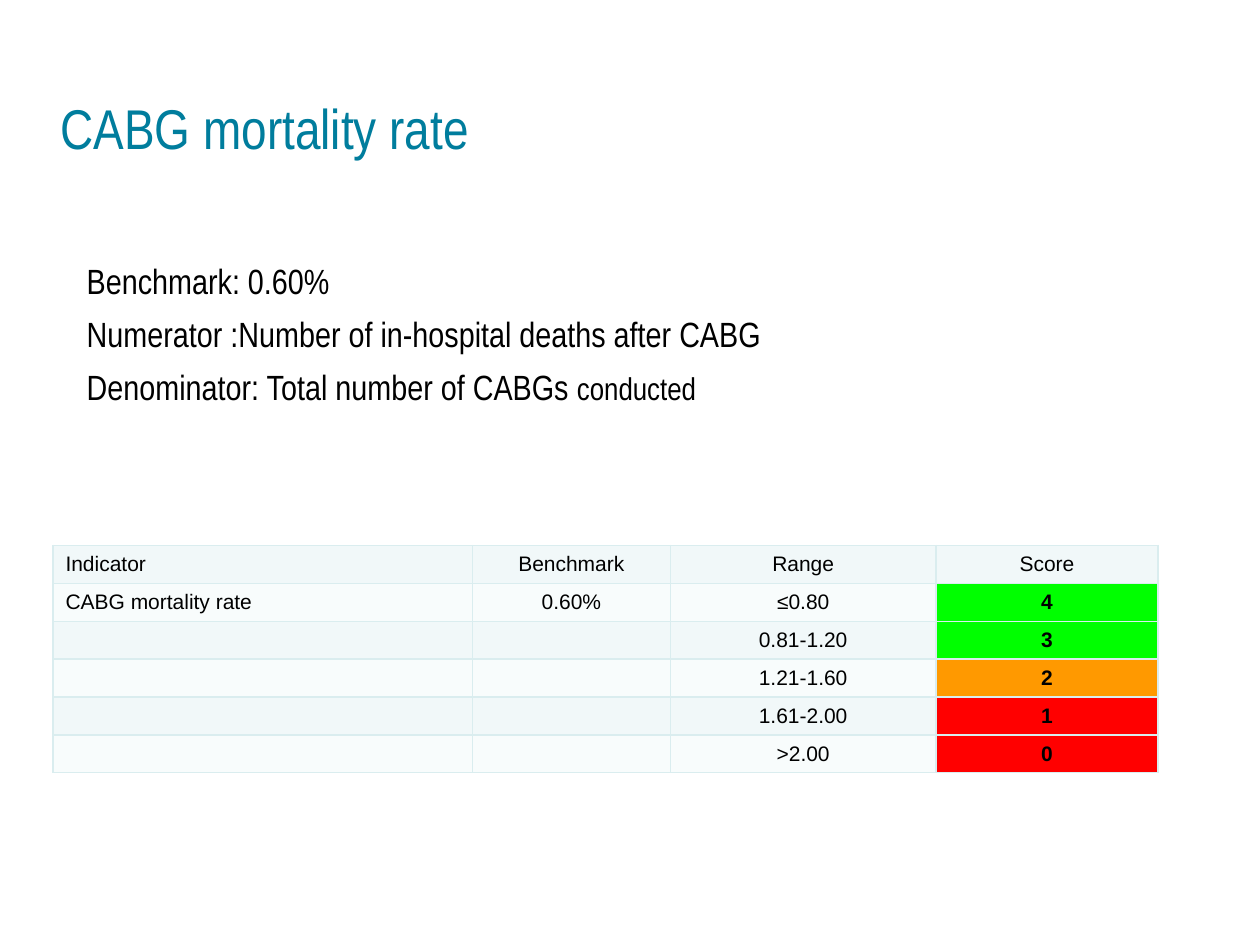
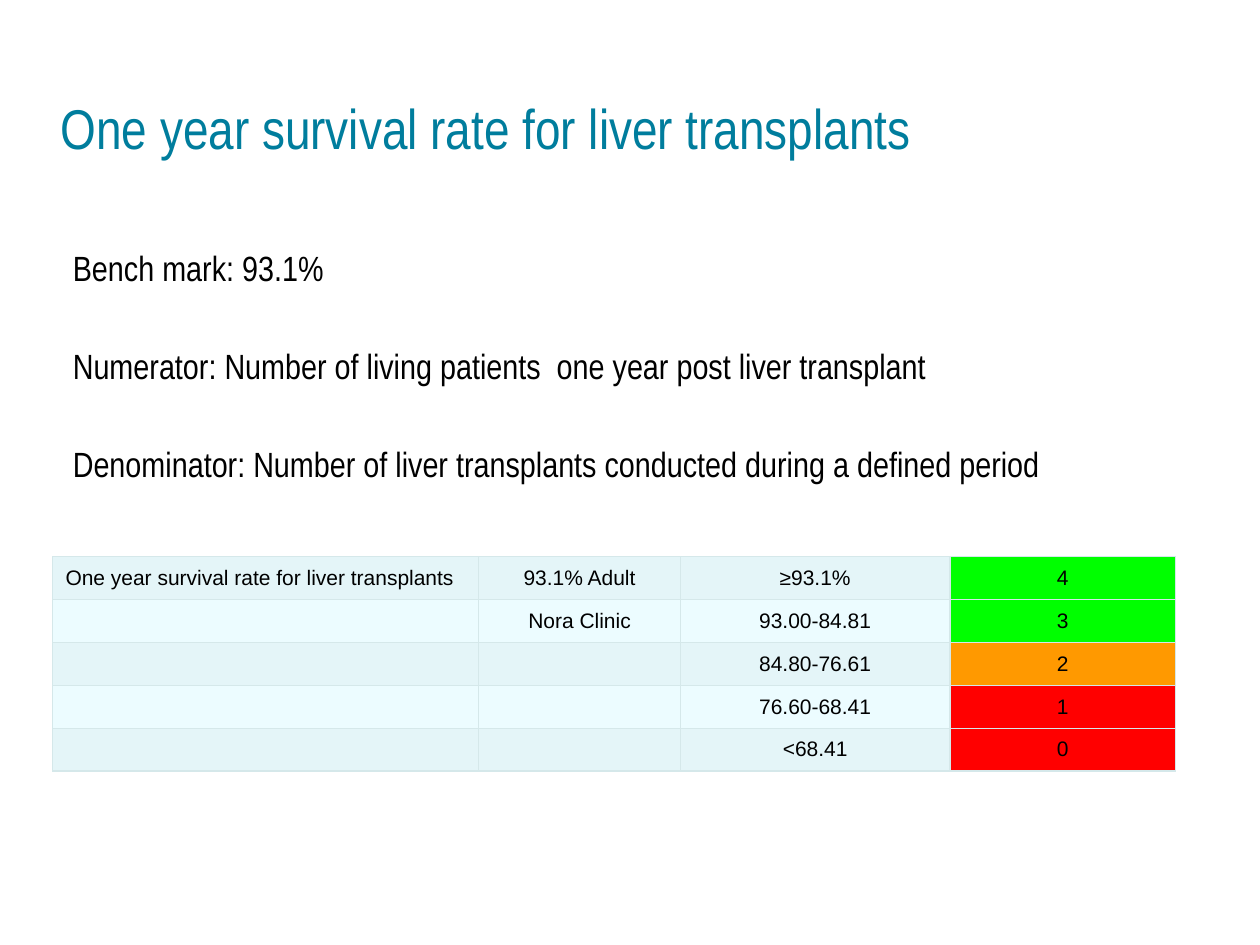
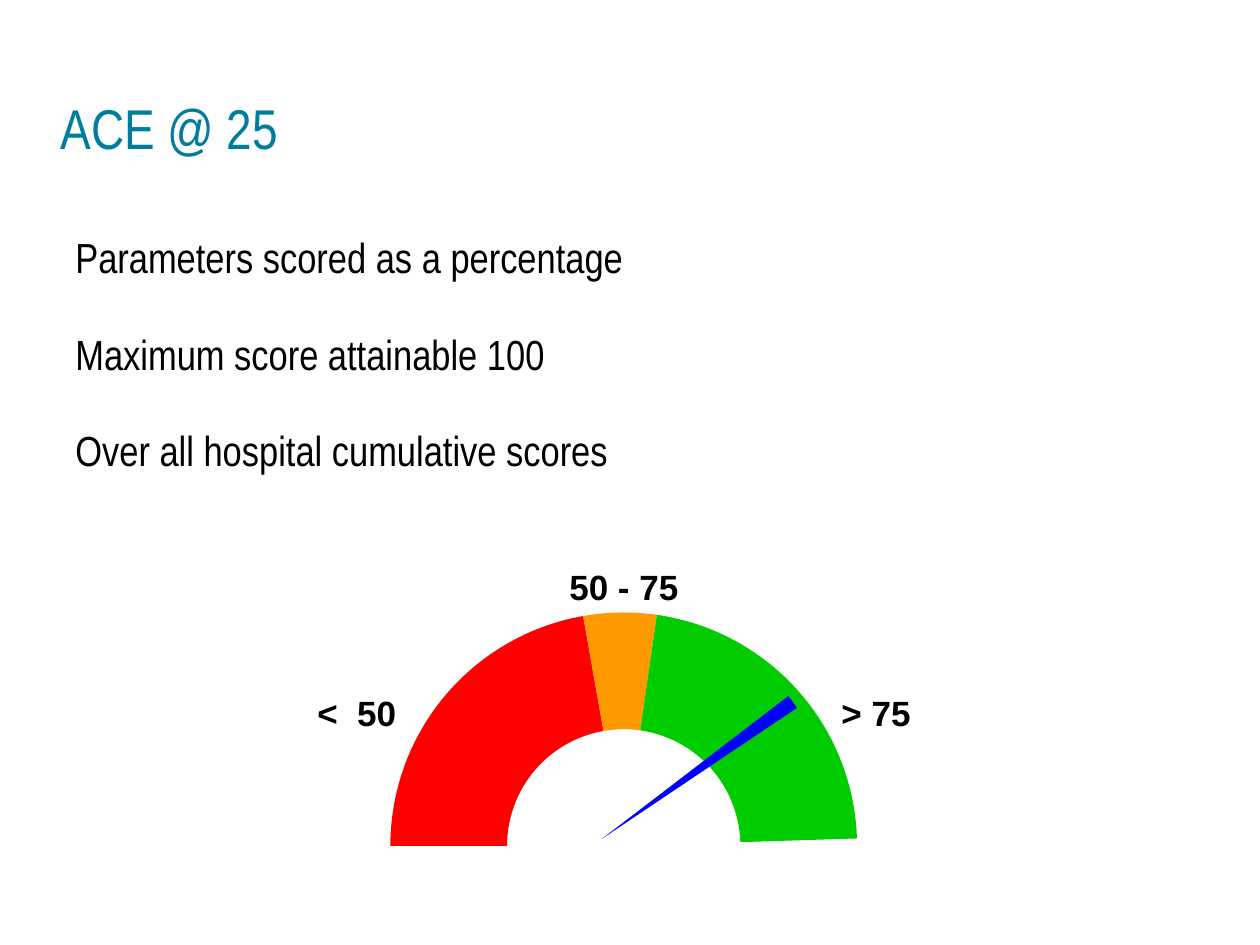
import pptx
import pptx.util
import pptx.chart.data
import pptx.dml.color
import pptx.enum.chart
import pptx.enum.text
import pptx.oxml
import pptx.oxml.ns

Inches = pptx.util.Inches
Pt = pptx.util.Pt
RGBColor = pptx.dml.color.RGBColor
Align = pptx.enum.text.PP_ALIGN
Anchor = pptx.enum.text.MSO_ANCHOR
Kind = pptx.enum.chart.XL_CHART_TYPE
qn = pptx.oxml.ns.qn

TEAL = RGBColor(0x00, 0x7D, 0x9D)
BLACK = RGBColor(0, 0, 0)
BLUE = RGBColor(0, 0, 0xFF)
LIME = RGBColor(0, 0xFF, 0)
GREEN = RGBColor(0, 0xCC, 0)
AMBER = RGBColor(0xFF, 0x99, 0)
RED = RGBColor(0xFF, 0, 0)
ICE = RGBColor(0xBB, 0xE0, 0xE3)
PALE = (RGBColor(0xF1, 0xF8, 0xF9), RGBColor(0xF8, 0xFC, 0xFC))
AQUA = (RGBColor(0xE4, 0xF5, 0xF8), RGBColor(0xEC, 0xFC, 0xFF))
EDGE = RGBColor(0xDA, 0xED, 0xEF)
RIM = RGBColor(0xD5, 0xE8, 0xEA)
SCORES = {"4": LIME, "3": LIME, "2": AMBER, "1": RED, "0": RED}
NARROW = "Arial Narrow"
PLAIN = "Arial"
C_NS = 'xmlns:c="http://schemas.openxmlformats.org/drawingml/2006/chart"'
A_NS = 'xmlns:a="http://schemas.openxmlformats.org/drawingml/2006/main"'


class Deck:
    def __init__(self):
        self.file = pptx.Presentation()
        self.file.slide_width = Inches(10)
        self.file.slide_height = Inches(7.5)
        self.slide = None

    def style(self, para, size, face=NARROW, color=BLACK, bold=False):
        for run in para.runs:
            font = run.font
            font.name, font.size, font.bold = face, Pt(size), bold
            font.color.rgb = color

    def title(self, text, width=8.29):
        self.slide = self.file.slides.add_slide(self.file.slide_layouts[5])
        shape = self.slide.shapes.title
        shape.left, shape.top = Inches(0.38), Inches(0.59)
        shape.width, shape.height = Inches(width), Inches(0.74)
        frame = shape.text_frame
        frame.text = text
        frame.auto_size = pptx.enum.text.MSO_AUTO_SIZE.NONE
        frame.vertical_anchor = Anchor.BOTTOM
        para = frame.paragraphs[0]
        para.alignment = Align.LEFT
        para.line_spacing = 0.9
        self.style(para, 32, color=TEAL)

    def body(self, box, lines, size, gap, pitch=1.0):
        frame = self.slide.shapes.add_textbox(*map(Inches, box)).text_frame
        frame.word_wrap = True
        frame.text = "\n".join(lines)
        for i, para in enumerate(frame.paragraphs):
            para.line_spacing = pitch
            para.space_before = Pt(gap if i else 0)
            self.style(para, size)
        return frame

    def label(self, text, left, top, width):
        box = self.slide.shapes.add_textbox(
            Inches(left), Inches(top), Inches(width), Inches(0.44))
        box.text_frame.word_wrap = False
        box.text_frame.text = text
        self.style(box.text_frame.paragraphs[0], 20, PLAIN, bold=True)

    def edges(self, cell, color, width):
        props = cell._tc.get_or_add_tcPr()
        for side in "LRTB":
            props.append(pptx.oxml.parse_xml(
                f'<a:ln{side} {A_NS} w="{Pt(width)}"><a:solidFill>'
                f'<a:srgbClr val="{color}"/></a:solidFill></a:ln{side}>'))

    def table(self, left, top, cols, rows, data, bands, edge, width, bold):
        table = self.slide.shapes.add_table(
            len(rows), len(cols), Inches(left), Inches(top),
            Inches(sum(cols)), Inches(sum(rows))).table
        for col, size in zip(table.columns, cols):
            col.width = Inches(size)
        for row, size in zip(table.rows, rows):
            row.height = Inches(size)
        for r, texts in enumerate(data):
            for c, text in enumerate(texts):
                cell = table.cell(r, c)
                score = c == len(cols) - 1 and text in SCORES
                cell.text = text
                cell.vertical_anchor = Anchor.MIDDLE
                self.edges(cell, edge, width)
                cell.fill.solid()
                cell.fill.fore_color.rgb = SCORES[text] if score else bands[r % 2]
                para = cell.text_frame.paragraphs[0]
                para.alignment = Align.CENTER if c else Align.LEFT
                self.style(para, 12, PLAIN, bold=bool(score and bold))
                if not text:
                    para._p.get_or_add_endParaRPr().set("sz", "1200")

    def dial(self, kind, box, values, fills, plot):
        data = pptx.chart.data.CategoryChartData()
        data.categories = [str(i + 1) for i in range(len(values))]
        data.add_series("Series 1", values)
        chart = self.slide.shapes.add_chart(kind, *map(Inches, box), data).chart
        chart.has_legend = chart.has_title = False
        chart.font.name, chart.font.size = PLAIN, Pt(5.5)
        chart.font.color.rgb = BLACK
        ring = chart.plots[0]
        ring.vary_by_categories = True
        for i, color in enumerate(fills):
            form = ring.series[0].points[i].format
            form.line.fill.background()
            if color is None:
                form.fill.background()
            else:
                form.fill.solid()
                form.fill.fore_color.rgb = color
        self.turn(ring._element, plot)

    def turn(self, ring, plot):
        angle = ring.find(qn("c:firstSliceAng"))
        if angle is None:
            angle = pptx.oxml.parse_xml(f"<c:firstSliceAng {C_NS}/>")
            ring.append(angle)
        angle.set("val", "270")
        hole = ring.find(qn("c:holeSize"))
        if hole is not None:
            hole.set("val", "65")
        area = ring.getparent()
        for old in area.findall(qn("c:layout")):
            area.remove(old)
        parts = "".join(f'<c:{k} val="{v}"/>' for k, v in zip("xywh", plot))
        area.insert(0, pptx.oxml.parse_xml(
            f'<c:layout {C_NS}><c:manualLayout><c:layoutTarget val="inner"/>'
            '<c:xMode val="edge"/><c:yMode val="edge"/>'
            f"{parts}</c:manualLayout></c:layout>"))
        clear = (f"<c:spPr {C_NS} {A_NS}><a:noFill/>"
                 "<a:ln><a:noFill/></a:ln></c:spPr>")
        area.append(pptx.oxml.parse_xml(clear))
        area.getparent().addnext(pptx.oxml.parse_xml(clear))


def bypass(deck):
    deck.title("CABG mortality rate", 5.24)
    frame = deck.body((0.59, 2.06, 9.17, 2.08), [
        "Benchmark: 0.60%",
        "Numerator :Number of in-hospital deaths after CABG",
        "Denominator: Total number of CABGs "], 20, 10, 0.85)
    last = frame.paragraphs[-1]
    last.add_run().text = "conducted"
    deck.style(last, 20)
    last.runs[-1].font.size = Pt(18)
    deck.table(0.42, 4.33, [3.33, 1.57, 2.11, 1.76], [0.25] + [0.3] * 5, [
        ["Indicator", "Benchmark", "Range", "Score"],
        ["CABG mortality rate", "0.60%", "≤0.80", "4"],
        ["", "", "0.81-1.20", "3"],
        ["", "", "1.21-1.60", "2"],
        ["", "", "1.61-2.00", "1"],
        ["", "", ">2.00", "0"]], PALE, EDGE, 1, True)


def liver(deck):
    deck.title("One year survival rate for liver transplants")
    deck.body((0.48, 1.91, 9.4, 2.17), [
        "Bench mark: 93.1%",
        "Numerator: Number of living patients  one year post liver transplant",
        "Denominator: Number of liver transplants conducted during a defined period"],
        20, 32)
    deck.table(0.42, 4.42, [3.38, 1.6, 2.14, 1.79], [0.34] * 5, [
        ["One year survival rate for liver transplants", "93.1% Adult", "≥93.1%", "4"],
        ["", "Nora Clinic", "93.00-84.81", "3"],
        ["", "", "84.80-76.61", "2"],
        ["", "", "76.60-68.41", "1"],
        ["", "", "<68.41", "0"]], AQUA, RIM, 0.75, False)


def gauge(deck):
    deck.title("ACE @ 25")
    deck.body((0.5, 1.59, 6.33, 2.58), [
        "Parameters scored as a percentage",
        "Maximum score attainable 100",
        "Over all hospital cumulative scores"], 24, 12, 1.5)
    deck.dial(Kind.DOUGHNUT, (3.02, 4.78, 3.9, 3.83), [0, 22, 5, 22, 50],
              [ICE, RED, AMBER, GREEN, None], (0.02, 0.02, 0.95, 0.97))
    deck.label("> 75", 6.58, 5.44, 0.83)
    deck.label("50 - 75", 4.42, 4.44, 1.15)
    deck.label("<  50", 2.42, 5.44, 0.91)
    deck.dial(Kind.PIE, (2.83, 4.69, 3.89, 3.94), [40, 1, 60],
              [None, BLUE, None], (0.02, 0.02, 0.96, 0.96))


def main():
    deck = Deck()
    for build in (bypass, liver, gauge):
        build(deck)
    deck.file.save("out.pptx")


if __name__ == "__main__":
    main()
